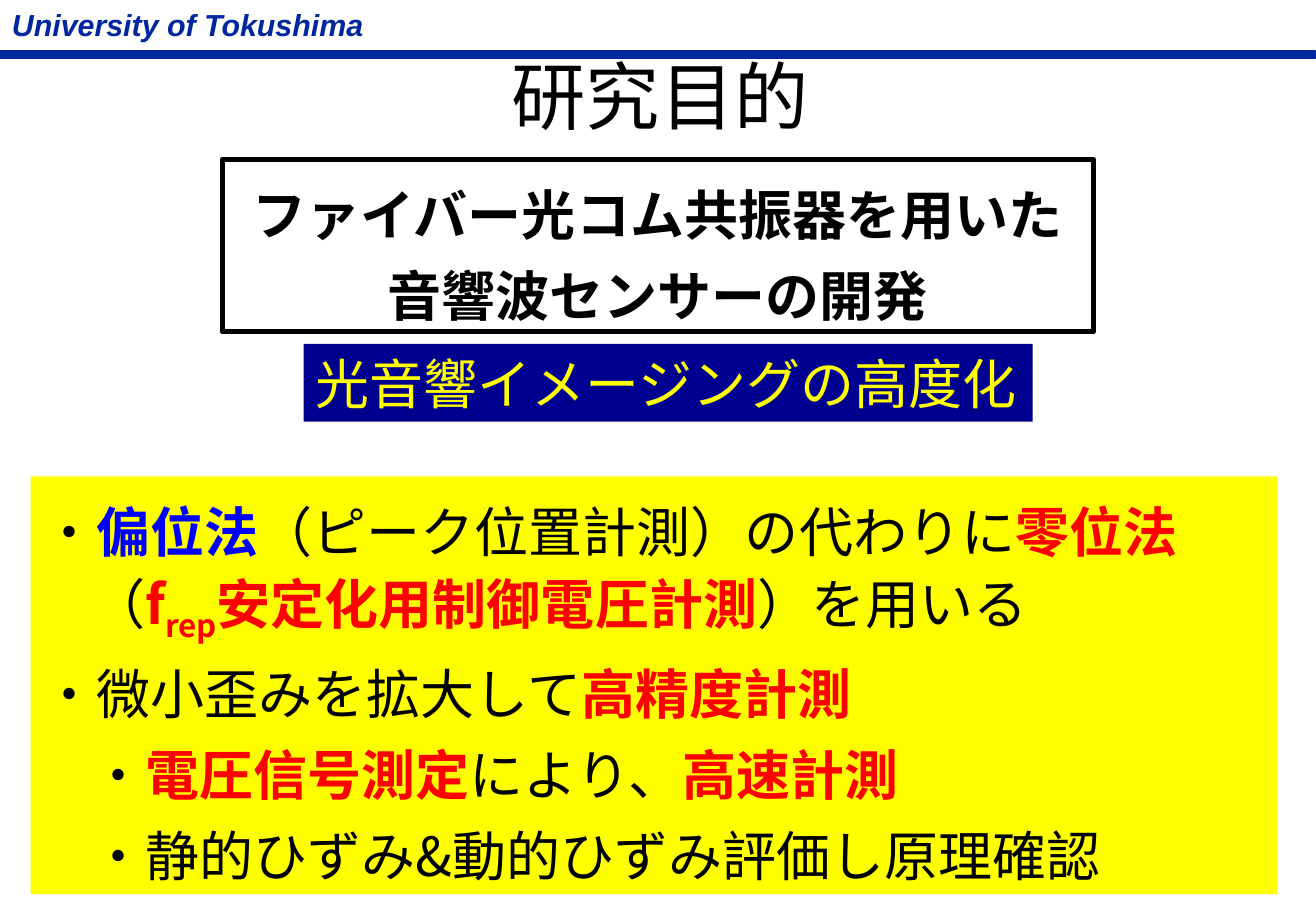
from dataclasses import dataclass

from lxml import etree
from pptx import Presentation
from pptx.dml.color import RGBColor
from pptx.enum.shapes import MSO_SHAPE
from pptx.enum.text import MSO_ANCHOR, PP_ALIGN
from pptx.oxml.ns import qn
from pptx.util import Cm, Pt

RECT = MSO_SHAPE.RECTANGLE
TOP = MSO_ANCHOR.TOP
LEFT = PP_ALIGN.LEFT
MID = PP_ALIGN.CENTER


@dataclass(frozen=True)
class Theme:
    latin: str = "Arial"
    asian: str = "Noto Sans CJK JP"
    navy: str = "00279F"
    deep: str = "000090"
    blue: str = "0000FF"
    red: str = "FF0000"
    yellow: str = "FFFF00"
    black: str = "000000"
    head: int = 44
    body: int = 32
    small: int = 18
    pitch: int = 48


THEME = Theme()


def add_run(para, text, color=THEME.black, size=THEME.body, bold=False,
            face=THEME.asian, italic=False, base=0):
    run = para.add_run()
    run.text = text
    font = run.font
    font.name, font.size = face, Pt(size)
    font.bold, font.italic = bold, italic
    font.color.rgb = RGBColor.from_string(color)
    props = font._element
    etree.SubElement(props, qn("a:ea")).set("typeface", face)
    if base:
        props.set("baseline", str(base * 1000))


def add_para(frame, first, runs, align=LEFT, pitch=None, left=0, hang=0):
    para = frame.paragraphs[0] if first else frame.add_paragraph()
    para.alignment = align
    if pitch:
        para.line_spacing = Pt(pitch)
    props = para._p.get_or_add_pPr()
    props.set("marL", str(Cm(left)))
    props.set("indent", str(Cm(-hang)))
    for text, style in runs:
        add_run(para, text, **style)


def set_frame(shape, wrap=True):
    frame = shape.text_frame
    frame.word_wrap = wrap
    frame.vertical_anchor = TOP
    return frame


def add_label(slide, area, text, style, align=LEFT, pitch=None, wrap=True):
    box = slide.shapes.add_textbox(*map(Cm, area))
    add_para(set_frame(box, wrap), True, [(text, style)], align, pitch)


def add_panel(slide, area, fill=None, line=None, width=1):
    box = slide.shapes.add_shape(RECT, *map(Cm, area))
    box.shadow.inherit = False
    if fill:
        box.fill.solid()
        box.fill.fore_color.rgb = RGBColor.from_string(fill)
    else:
        box.fill.background()
    if line:
        box.line.color.rgb = RGBColor.from_string(line)
        box.line.width = Pt(width)
    else:
        box.line.fill.background()
    return box


def add_header(slide):
    add_panel(slide, (0, 1.07, 27.5, 0.15), THEME.navy, THEME.navy)
    style = dict(color=THEME.navy, size=THEME.small, bold=True,
                 face=THEME.latin, italic=True)
    add_label(slide, (0, 0, 8.08, 1.02), "University of Tokushima", style,
              wrap=False)


def add_goal(slide):
    box = add_panel(slide, (4.65, 3.33, 18.21, 3.61), line=THEME.black, width=3)
    frame = set_frame(box)
    lines = ["ファイバー光コム共振器を用いた", "音響波センサーの開発"]
    for i, text in enumerate(lines):
        add_para(frame, i == 0, [(text, dict(bold=True))], MID, THEME.pitch)


def add_points(slide):
    box = add_panel(slide, (0.64, 9.96, 26.06, 8.74), THEME.yellow)
    frame = set_frame(box)
    plain = {}
    blue = dict(color=THEME.blue, bold=True)
    red = dict(color=THEME.red, bold=True)
    points = [
        (1.02, [("・", plain), ("偏位法", blue),
                ("（ピーク位置計測）の代わりに", plain), ("零位法", red),
                ("（", plain), ("f", red), ("rep", dict(red, base=-25)),
                ("安定化用制御電圧計測", red), ("）を用いる", plain)]),
        (1.02, [("・微小歪みを拡大して", plain), ("高精度計測", red)]),
        (0, [("・", plain), ("電圧信号測定", red), ("により、", plain),
             ("高速計測", red)]),
        (0, [("・静的ひずみ&動的ひずみ評価し原理確認", plain)]),
    ]
    for i, (hang, runs) in enumerate(points):
        add_para(frame, i == 0, runs, pitch=THEME.pitch, left=1.02, hang=hang)


def main():
    deck = Presentation()
    deck.slide_width, deck.slide_height = Cm(27.51), Cm(19.05)
    slide = deck.slides.add_slide(deck.slide_layouts[6])
    add_header(slide)
    add_label(slide, (0.05, 0.91, 27.51, 2.13), "研究目的",
              dict(size=THEME.head), MID, 53)
    add_points(slide)
    add_goal(slide)
    tag = add_panel(slide, (6.35, 7.19, 15.24, 1.63), THEME.deep)
    add_para(set_frame(tag, False), True,
             [("光音響イメージングの高度化", dict(color=THEME.yellow))],
             pitch=39)
    deck.save("out.pptx")


if __name__ == "__main__":
    main()
